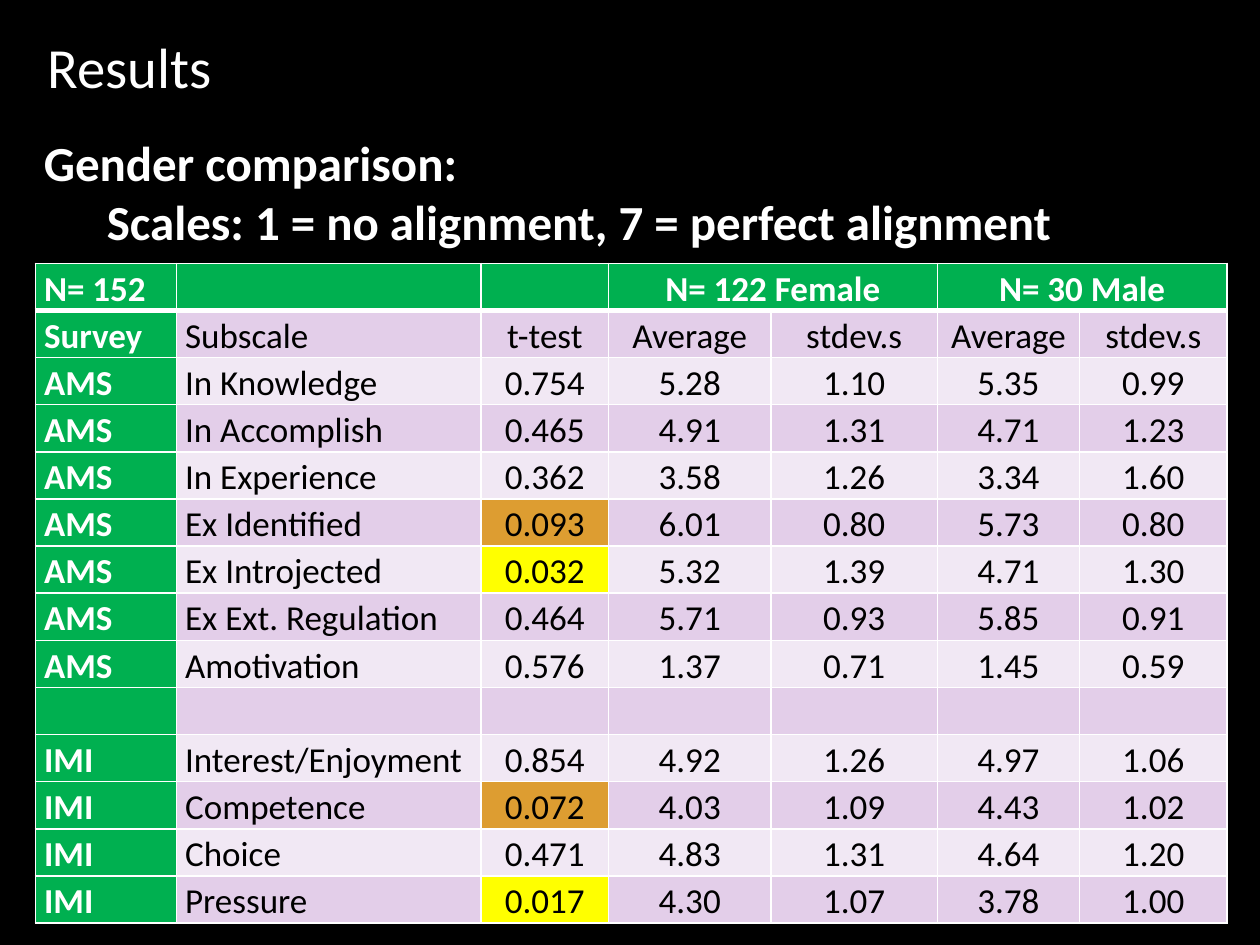
"""Build the gender comparison results slide."""
from dataclasses import dataclass

import pptx
import pptx.dml.color
import pptx.enum.text
import pptx.oxml
import pptx.oxml.ns
import pptx.util
from pptx.util import Inches

FONT = "Calibri"
WHITE, BLACK, GREEN = "FFFFFF", "000000", "00B050"
BANDS = ("F1E8F4", "E3CEE9")
HIGHLIGHTS = {"0.093": "DD9D31", "0.072": "DD9D31", "0.032": "FFFF00", "0.017": "FFFF00"}
COL_WIDTHS = (1.12, 2.42, 1.01, 1.29, 1.32, 1.13, 1.17)
TABLE_HEIGHT = 5.24
LEFT, CENTER = pptx.enum.text.PP_ALIGN.LEFT, pptx.enum.text.PP_ALIGN.CENTER
MIDDLE, BOTTOM = pptx.enum.text.MSO_ANCHOR.MIDDLE, pptx.enum.text.MSO_ANCHOR.BOTTOM


@dataclass
class Row:
    survey: str = ""
    subscale: str = ""
    t_test: str = ""
    female_average: str = ""
    female_stdev: str = ""
    male_average: str = ""
    male_stdev: str = ""

    def values(self) -> tuple[str, ...]:
        return (self.survey, self.subscale, self.t_test, self.female_average,
                self.female_stdev, self.male_average, self.male_stdev)


@dataclass
class TextBox:
    lines: tuple[str, ...]
    left: float
    top: float
    width: float
    height: float
    size: float
    bold: bool = False
    anchor: pptx.enum.text.MSO_ANCHOR = pptx.enum.text.MSO_ANCHOR.TOP


ROWS = (
    Row("N= 152", female_average="N= 122 Female", male_average="N= 30 Male"),
    Row("Survey", "Subscale", "t-test", "Average", "stdev.s", "Average", "stdev.s"),
    Row("AMS", "In Knowledge", "0.754", "5.28", "1.10", "5.35", "0.99"),
    Row("AMS", "In Accomplish", "0.465", "4.91", "1.31", "4.71", "1.23"),
    Row("AMS", "In Experience", "0.362", "3.58", "1.26", "3.34", "1.60"),
    Row("AMS", "Ex Identified", "0.093", "6.01", "0.80", "5.73", "0.80"),
    Row("AMS", "Ex Introjected", "0.032", "5.32", "1.39", "4.71", "1.30"),
    Row("AMS", "Ex Ext. Regulation", "0.464", "5.71", "0.93", "5.85", "0.91"),
    Row("AMS", "Amotivation", "0.576", "1.37", "0.71", "1.45", "0.59"),
    Row(),
    Row("IMI", "Interest/Enjoyment", "0.854", "4.92", "1.26", "4.97", "1.06"),
    Row("IMI", "Competence", "0.072", "4.03", "1.09", "4.43", "1.02"),
    Row("IMI", "Choice", "0.471", "4.83", "1.31", "4.64", "1.20"),
    Row("IMI", "Pressure", "0.017", "4.30", "1.07", "3.78", "1.00"),
)
TITLE = TextBox(("Results",), 0.28, 0.3, 6.87, 0.45, 32.4, anchor=MIDDLE)
BODY = TextBox(("Gender comparison:", "Scales: 1 = no alignment, 7 = perfect alignment"),
               0.25, 1, 10.23, 6.35, 28, bold=True)


def rgb(color: str) -> pptx.dml.color.RGBColor:
    return pptx.dml.color.RGBColor.from_string(color)


def format_runs(p, size: float, color: str, bold: bool) -> None:
    for r in p.runs:
        r.font.name = FONT
        r.font.size = pptx.util.Pt(size)
        r.font.bold = bold
        r.font.color.rgb = rgb(color)


def add_text(slide, box: TextBox) -> None:
    sp = slide.shapes.add_textbox(Inches(box.left), Inches(box.top),
                                  Inches(box.width), Inches(box.height))
    tf = sp.text_frame
    tf.word_wrap = True
    tf.vertical_anchor = box.anchor
    for i, line in enumerate(box.lines):
        p = tf.add_paragraph() if i else tf.paragraphs[0]
        p.text = line
        if i:
            p._p.get_or_add_pPr().set("marL", str(Inches(0.5)))
        format_runs(p, box.size, WHITE, box.bold)


def set_borders(cell, top: float, bottom: float) -> None:
    tc_pr = cell._tc.get_or_add_tcPr()
    sides = (("lnL", 1), ("lnR", 1), ("lnT", top), ("lnB", bottom))
    for i, (tag, width) in enumerate(sides):
        tc_pr.insert(i, pptx.oxml.parse_xml(
            f'<a:{tag} {pptx.oxml.ns.nsdecls("a")} w="{pptx.util.Pt(width)}">'
            f'<a:solidFill><a:srgbClr val="{WHITE}"/></a:solidFill></a:{tag}>'))


def format_cell(cell, text: str, row: int, col: int) -> None:
    heading = row == 0 or col == 0
    cell.margin_left = cell.margin_right = Inches(0.07)
    cell.margin_top = cell.margin_bottom = 0
    cell.vertical_anchor = BOTTOM
    cell.fill.solid()
    cell.fill.fore_color.rgb = rgb(GREEN if heading else HIGHLIGHTS.get(text, BANDS[row % 2]))
    set_borders(cell, top=3 if row == 1 else 1, bottom=3 if row == 0 else 1)
    p = cell.text_frame.paragraphs[0]
    p.text = text
    p.alignment = CENTER if col > 1 else LEFT
    p.line_spacing = 1.07
    format_runs(p, 20, WHITE if heading else BLACK, heading)


def add_results_table(slide) -> None:
    table = slide.shapes.add_table(len(ROWS), len(COL_WIDTHS), Inches(0.28), Inches(2.09),
                                   Inches(sum(COL_WIDTHS)), Inches(TABLE_HEIGHT)).table
    table.first_row = table.horz_banding = False
    for column, width in zip(table.columns, COL_WIDTHS):
        column.width = Inches(width)
    for i, row in enumerate(ROWS):
        table.rows[i].height = Inches(TABLE_HEIGHT / len(ROWS))
        for j, text in enumerate(row.values()):
            format_cell(table.cell(i, j), text, i, j)
    for col in (3, 5):
        table.cell(0, col).merge(table.cell(0, col + 1))


def main() -> None:
    prs = pptx.Presentation()
    prs.slide_width, prs.slide_height = Inches(10), Inches(7.5)
    slide = prs.slides.add_slide(prs.slide_layouts[6])
    slide.background.fill.solid()
    slide.background.fill.fore_color.rgb = rgb(BLACK)
    add_text(slide, TITLE)
    add_text(slide, BODY)
    add_results_table(slide)
    prs.save("out.pptx")


if __name__ == "__main__":
    main()
